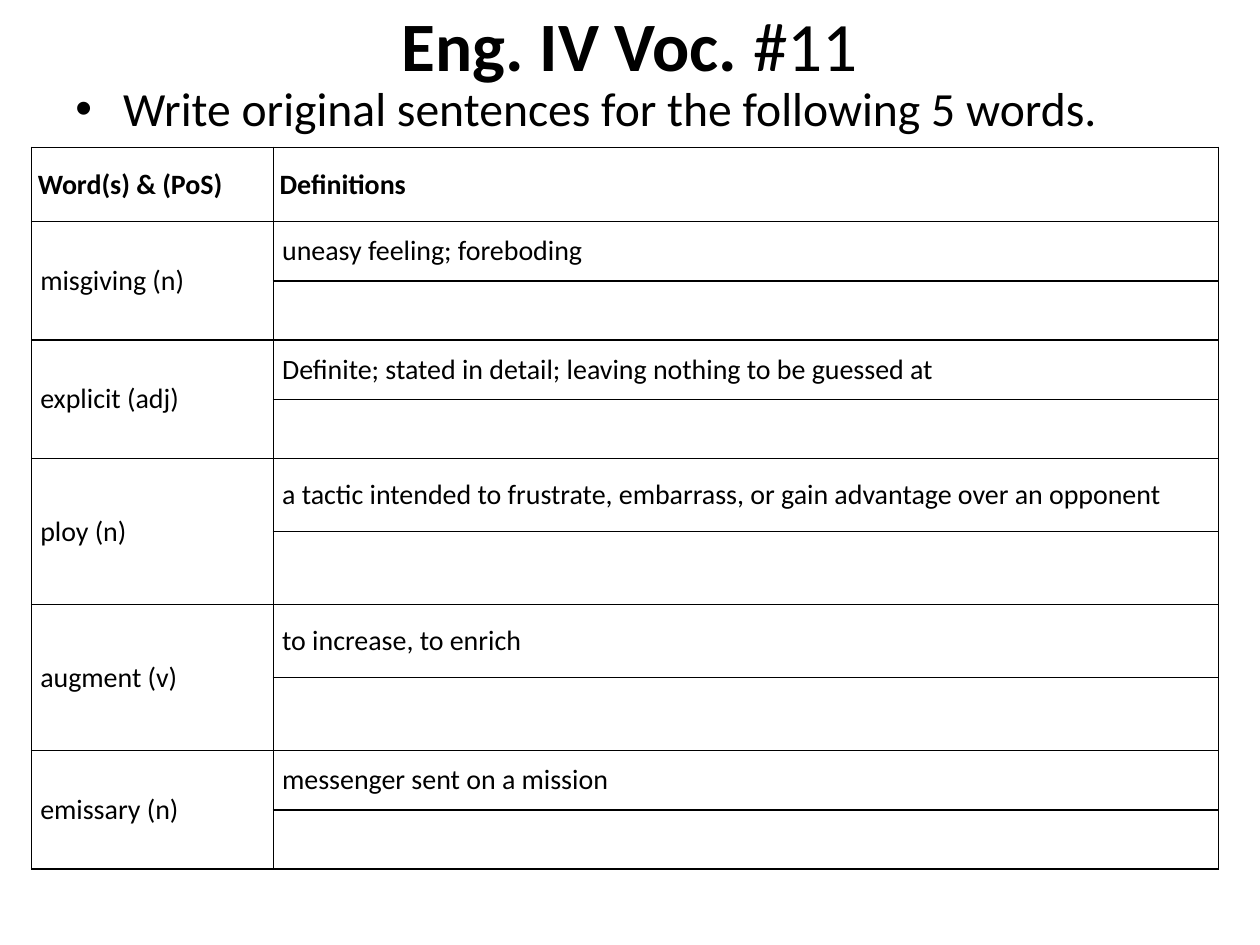
import pptx
import pptx.dml.color
import pptx.enum.text
import pptx.oxml
import pptx.oxml.ns
import pptx.util
from lxml import etree

Inches, Pt = pptx.util.Inches, pptx.util.Pt
ANCHOR, ALIGN = pptx.enum.text.MSO_ANCHOR, pptx.enum.text.PP_ALIGN
COLORS = {"ink": "000000", "paper": "FFFFFF"}
qn = pptx.oxml.ns.qn


def add_run(p, text, size, bold=False):
    r = p.add_run()
    r.text = text
    r.font.name = "Calibri"
    r.font.size = Pt(size)
    r.font.bold = bold
    r.font.color.rgb = pptx.dml.color.RGBColor.from_string(COLORS["ink"])


def style_cell(cell, inset):
    """Set margins, anchor, plain fill and thin borders on all four sides."""
    cell.margin_left = cell.margin_right = Inches(inset)
    cell.margin_top = cell.margin_bottom = 0
    cell.vertical_anchor = ANCHOR.MIDDLE
    tcPr = cell._tc.get_or_add_tcPr()
    for side in ("lnL", "lnR", "lnT", "lnB"):
        ln = etree.SubElement(tcPr, qn("a:" + side), w=str(Pt(1)))
        fill = etree.SubElement(ln, qn("a:solidFill"))
        etree.SubElement(fill, qn("a:srgbClr"), val=COLORS["ink"])
    cell.fill.solid()
    cell.fill.fore_color.rgb = pptx.dml.color.RGBColor.from_string(COLORS["paper"])


prs = pptx.Presentation()
prs.slide_width, prs.slide_height = Inches(10), Inches(7.5)
s = prs.slides.add_slide(prs.slide_layouts[6])

# Title
tf = s.shapes.add_textbox(Inches(0.5), 0, Inches(9), Inches(0.7)).text_frame
tf.word_wrap = True
tf.vertical_anchor = ANCHOR.MIDDLE
p = tf.paragraphs[0]
p.alignment = ALIGN.CENTER
add_run(p, "Eng. IV Voc. ", 39.6, True)
add_run(p, "#11", 39.6)

# Instruction
tf = s.shapes.add_textbox(Inches(0.5), Inches(0.58), Inches(9), Inches(0.5)).text_frame
tf.word_wrap = True
p = tf.paragraphs[0]
pPr = p._p.get_or_add_pPr()
pPr.set("marL", str(Inches(0.38)))
pPr.set("indent", str(-Inches(0.38)))
etree.SubElement(pPr, qn("a:buFont"), typeface="Arial")
etree.SubElement(pPr, qn("a:buChar"), char="•")
add_run(p, "Write original sentences for the following 5 words.", 27.2)

# Vocabulary table: each word spans its definition and an empty answer row
words = [
    ("misgiving (n)", "uneasy feeling; foreboding", 0.47),
    ("explicit (adj)", "Definite; stated in detail; leaving nothing to be guessed at", 0.47),
    ("ploy (n)", "a tactic intended to frustrate, embarrass, or gain advantage over an opponent", 0.58),
    ("augment (v)", "to increase, to enrich", 0.58),
    ("emissary (n)", "messenger sent on a mission", 0.47),
]
table = s.shapes.add_table(1 + 2 * len(words), 2, Inches(0.25), Inches(1.17),
                           Inches(9.42), Inches(5.75)).table
table.horz_banding = False
table.columns[0].width, table.columns[1].width = Inches(1.92), Inches(7.5)
table.rows[0].height = Inches(0.59)

for i, row in enumerate(table.rows):
    for cell in row.cells:
        style_cell(cell, 0.07 if i else 0.05)

for col, heading in enumerate(("Word(s) & (PoS)", "Definitions")):
    add_run(table.cell(0, col).text_frame.paragraphs[0], heading, 16, True)

for i, (word, definition, height) in enumerate(words):
    top = 1 + 2 * i
    table.rows[top].height = table.rows[top + 1].height = Inches(height)
    table.cell(top, 0).merge(table.cell(top + 1, 0))
    for col, text in enumerate((word, definition)):
        add_run(table.cell(top, col).text_frame.paragraphs[0], text, 16)

prs.save("out.pptx")
